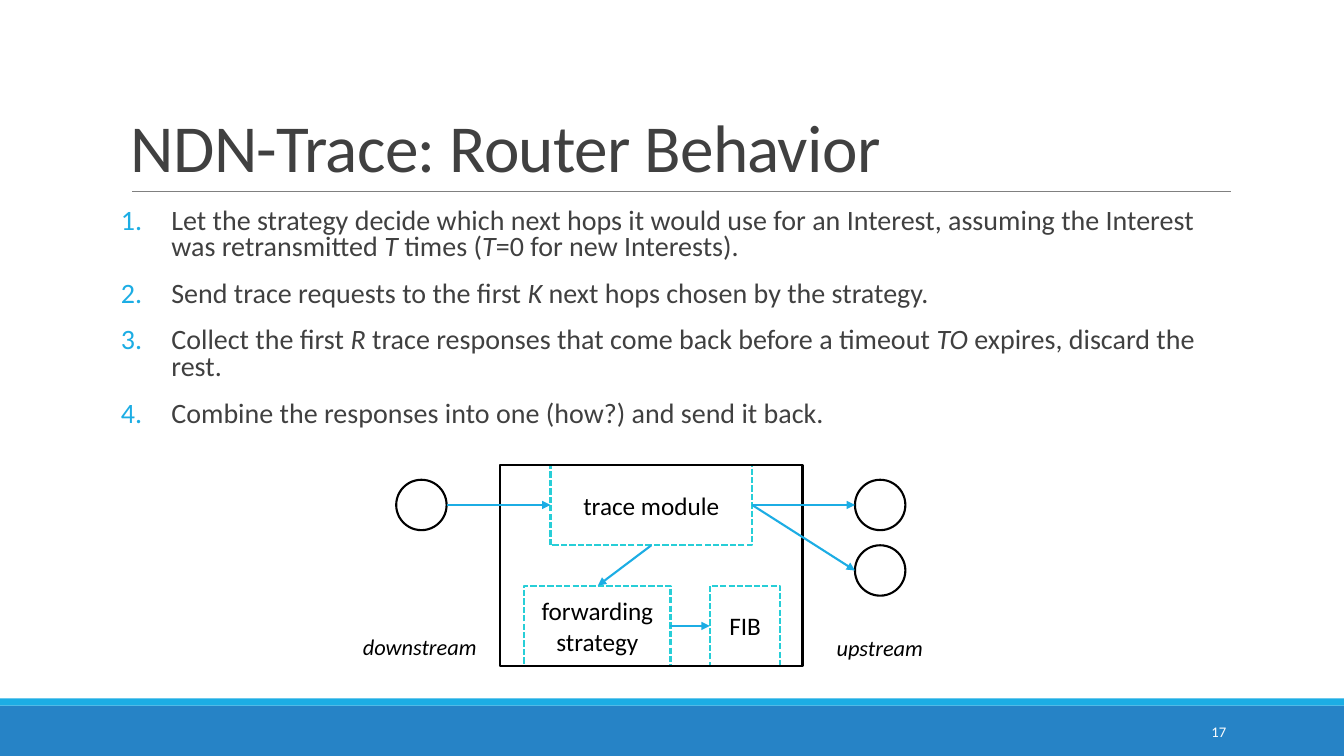
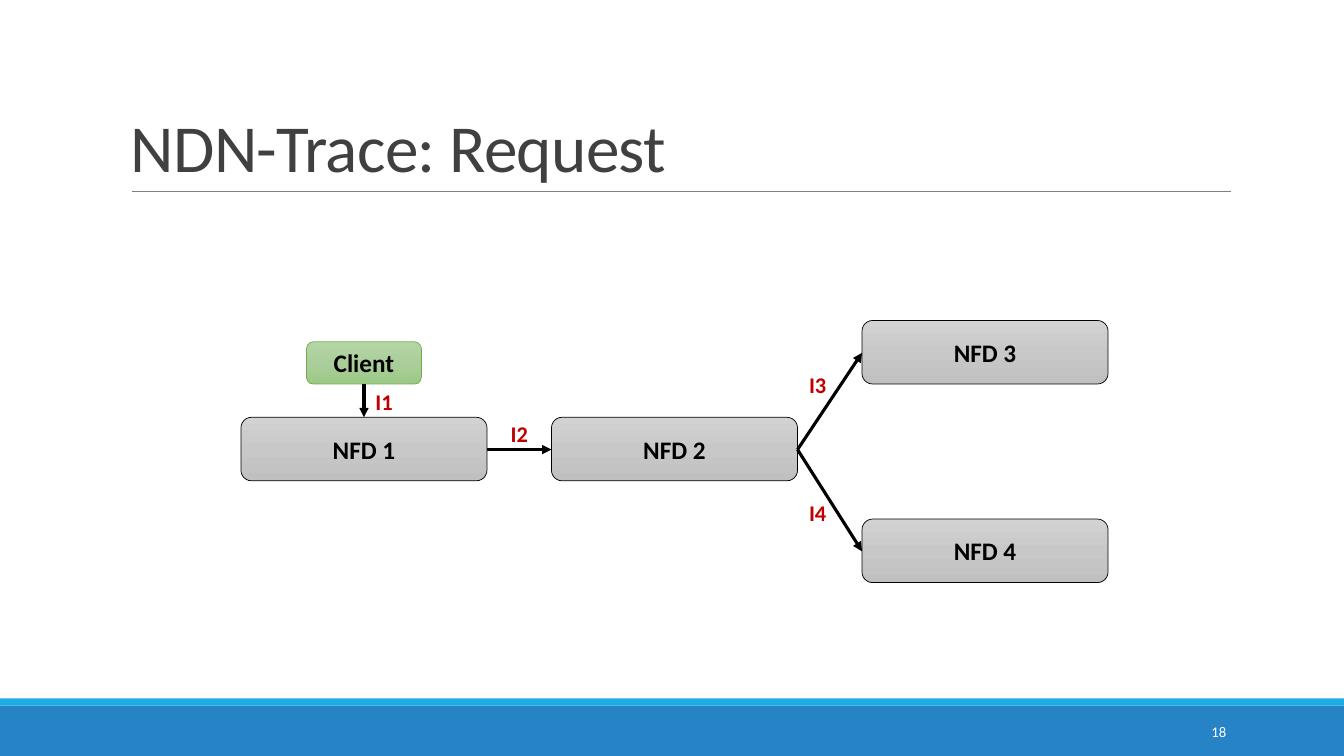
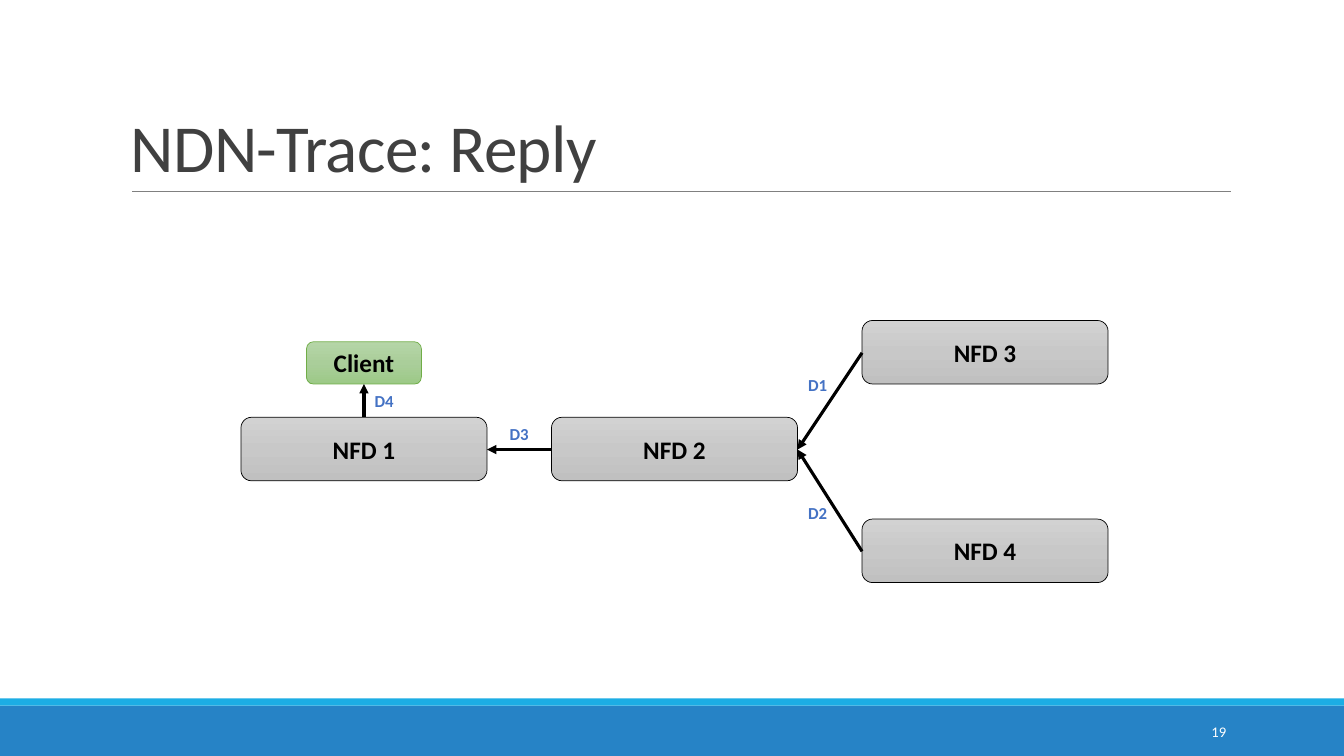
"""Build three slides on NDN-Trace: router behavior, request and reply."""
from copy import deepcopy

from lxml.etree import SubElement
from pptx import Presentation
from pptx.dml.color import RGBColor
from pptx.enum.dml import MSO_LINE
from pptx.enum.shapes import MSO_CONNECTOR, MSO_SHAPE as SHAPE
from pptx.enum.text import MSO_ANCHOR as ANCHOR, PP_ALIGN as ALIGN
from pptx.oxml.ns import qn
from pptx.util import Pt

PX = 9144
FONT = "Calibri"
COLORS = {
    "white": "FFFFFF", "black": "000000", "text": "404040", "rule": "808080",
    "band": "2683C6", "accent": "1CADE4", "module": "27CED7",
    "request": "C00000", "reply": "4472C4", "client": "70AD47",
}
GRAY_GRADIENT = ["D2D2D2", "C8C8C8", "C0C0C0"]
GREEN_GRADIENT = ["B5D5A7", "AACE9A", "9CC987"]


def add_box(slide, bounds, text="", size=18, color="black", bold=False,
            align=ALIGN.CENTER, anchor=ANCHOR.MIDDLE, preset=None,
            fill=None, line=None, width=1.5):
    """Add a text box, or a preset shape when one is named."""
    bounds = [value * PX for value in bounds]
    if preset is None:
        box = slide.shapes.add_textbox(*bounds)
    else:
        box = slide.shapes.add_shape(preset, *bounds)
        box.shadow.inherit = False
        if isinstance(fill, list):
            box.fill.gradient()
            box.fill.gradient_angle = 270
            stops = box.element.spPr.find(".//" + qn("a:gsLst"))
            stops.insert(1, deepcopy(stops[0]))
            stops[1].set("pos", "50000")
            for stop, value in zip(box.fill.gradient_stops, fill):
                stop.color.rgb = RGBColor.from_string(value)
        elif fill:
            box.fill.solid()
            box.fill.fore_color.rgb = RGBColor.from_string(COLORS[fill])
        else:
            box.fill.background()
        if line:
            box.line.color.rgb = RGBColor.from_string(COLORS[line])
            box.line.width = Pt(width)
        else:
            box.line.fill.background()
    if text:
        frame = box.text_frame
        frame.word_wrap = True
        frame.vertical_anchor = anchor
        frame.text = text
        for paragraph in frame.paragraphs:
            paragraph.alignment = align
            for run in paragraph.runs:
                run.font.name = FONT
                run.font.size = Pt(size)
                run.font.bold = bold
                run.font.color.rgb = RGBColor.from_string(COLORS[color])
    return box


def add_line(slide, start, end, color, width, arrow=None):
    """Add a straight line with an optional arrowhead at headEnd or tailEnd."""
    points = [value * PX for value in (*start, *end)]
    connector = slide.shapes.add_connector(MSO_CONNECTOR.STRAIGHT, *points)
    connector.line.color.rgb = RGBColor.from_string(COLORS[color])
    connector.line.width = Pt(width)
    properties = connector.element.spPr
    if arrow:
        SubElement(properties.find(qn("a:ln")), qn("a:" + arrow), type="triangle")
    SubElement(properties, qn("a:effectLst"))


presentation = Presentation()
presentation.slide_width = 1333 * PX
presentation.slide_height = 750 * PX

slides = []
for number, topic in enumerate(["Router Behavior", "Request", "Reply"], 17):
    slide = presentation.slides.add_slide(presentation.slide_layouts[6])
    add_box(slide, (0, 700, 1333, 50), preset=SHAPE.RECTANGLE, fill="band")
    add_box(slide, (0, 693, 1333, 7), preset=SHAPE.RECTANGLE, fill="accent")
    add_line(slide, (131, 190), (1221, 190), "rule", 0.5)
    title = add_box(slide, (120, 31, 1100, 159), f"NDN-Trace: {topic}", 48, "text",
                    align=ALIGN.LEFT, anchor=ANCHOR.BOTTOM)
    title_paragraph = title.text_frame.paragraphs[0]
    title_paragraph.line_spacing = 0.85
    title_paragraph.runs[0].font.language_id = None
    for properties in title.element.iter(qn("a:rPr")):
        properties.set("spc", "-50")
    add_box(slide, (1083, 706, 143, 40), str(number), 10.5, "white", align=ALIGN.RIGHT)
    slides.append(slide)

router_slide, request_slide, reply_slide = slides

steps = [
    "Let the strategy decide which next hops it would use for an Interest, assuming "
    "the Interest was retransmitted *T* times (*T*=0 for new Interests).",
    "Send trace requests to the first *K* next hops chosen by the strategy.",
    "Collect the first *R* trace responses that come back before a timeout *TO* "
    "expires, discard the rest.",
    "Combine the responses into one (how?) and send it back.",
]
body = router_slide.shapes.add_textbox(120 * PX, 202 * PX, 1100 * PX, 440 * PX).text_frame
body.word_wrap = True
body.margin_left = body.margin_right = 0
for index, step in enumerate(steps):
    paragraph = body.add_paragraph() if index else body.paragraphs[0]
    paragraph.line_spacing = 0.8
    paragraph.space_before = Pt(12)
    paragraph.space_after = Pt(2)
    for position, part in enumerate(step.split("*")):
        run = paragraph.add_run()
        run.text = part
        run.font.name = FONT
        run.font.size = Pt(20)
        run.font.italic = position % 2 == 1
        run.font.color.rgb = RGBColor.from_string(COLORS["text"])
    properties = paragraph._p.get_or_add_pPr()
    properties.set("marL", str(50 * PX))
    properties.set("indent", str(-50 * PX))
    bullet_color = SubElement(properties, qn("a:buClr"))
    SubElement(bullet_color, qn("a:srgbClr"), val=COLORS["accent"])
    SubElement(properties, qn("a:buAutoNum"), type="arabicPeriod")

for text, left, top, width in [
    ("trace module", 546, 461, 200),
    ("forwarding\nstrategy", 520, 581, 145),
    ("FIB", 704, 581, 70),
]:
    module = add_box(router_slide, (left, top, width, 80), text,
                     preset=SHAPE.RECTANGLE, fill="white", line="module")
    module.line.dash_style = MSO_LINE.SQUARE_DOT
for left, top in [(393, 476), (848, 476), (848, 541)]:
    add_box(router_slide, (left, top, 50, 50), preset=SHAPE.OVAL, line="black")
for text, left, top, width in [("downstream", 350, 623, 135), ("upstream", 820, 624, 107)]:
    caption = add_box(router_slide, (left, top, width, 37), text, 16,
                      align=ALIGN.LEFT, anchor=ANCHOR.TOP)
    caption.text_frame.word_wrap = False
    caption.text_frame.paragraphs[0].runs[0].font.italic = True
add_box(router_slide, (496, 461, 300, 200), preset=SHAPE.RECTANGLE, line="black")
for start, end in [
    ((665, 621), (704, 621)),
    ((646, 541), (593, 581)),
    ((443, 501), (546, 501)),
    ((746, 501), (848, 501)),
    ((746, 501), (848, 566)),
]:
    add_line(router_slide, start, end, "accent", 1.5, "tailEnd")

nodes = [("NFD 1", 0, 414), ("NFD 2", 1, 414), ("NFD 3", 2, 318), ("NFD 4", 2, 515)]
links = [
    ((361, 381), (361, 414)),
    ((483, 446), (547, 446)),
    ((791, 446), (855, 350)),
    ((791, 446), (855, 547)),
]
label_places = [(361, 385), (495, 417), (791, 369), (791, 496)]
for slide, labels, color, size, arrow in [
    (request_slide, ["I1", "I2", "I3", "I4"], "request", 16, "tailEnd"),
    (reply_slide, ["D4", "D3", "D1", "D2"], "reply", 12, "headEnd"),
]:
    for name, column, top in nodes:
        add_box(slide, (239 + 308 * column, top, 244, 63), name, bold=True,
                preset=SHAPE.ROUNDED_RECTANGLE, fill=GRAY_GRADIENT, line="black", width=0.5)
    add_box(slide, (304, 339, 114, 42), "Client", bold=True,
            preset=SHAPE.ROUNDED_RECTANGLE, fill=GREEN_GRADIENT, line="client", width=0.5)
    for (start, end), label, (left, top) in zip(links, labels, label_places):
        add_line(slide, start, end, "black", 2.25, arrow)
        frame = add_box(slide, (left, top, 40, 26), label, size, color, bold=True).text_frame
        frame.margin_left = frame.margin_right = frame.margin_top = frame.margin_bottom = 0

presentation.save("out.pptx")
